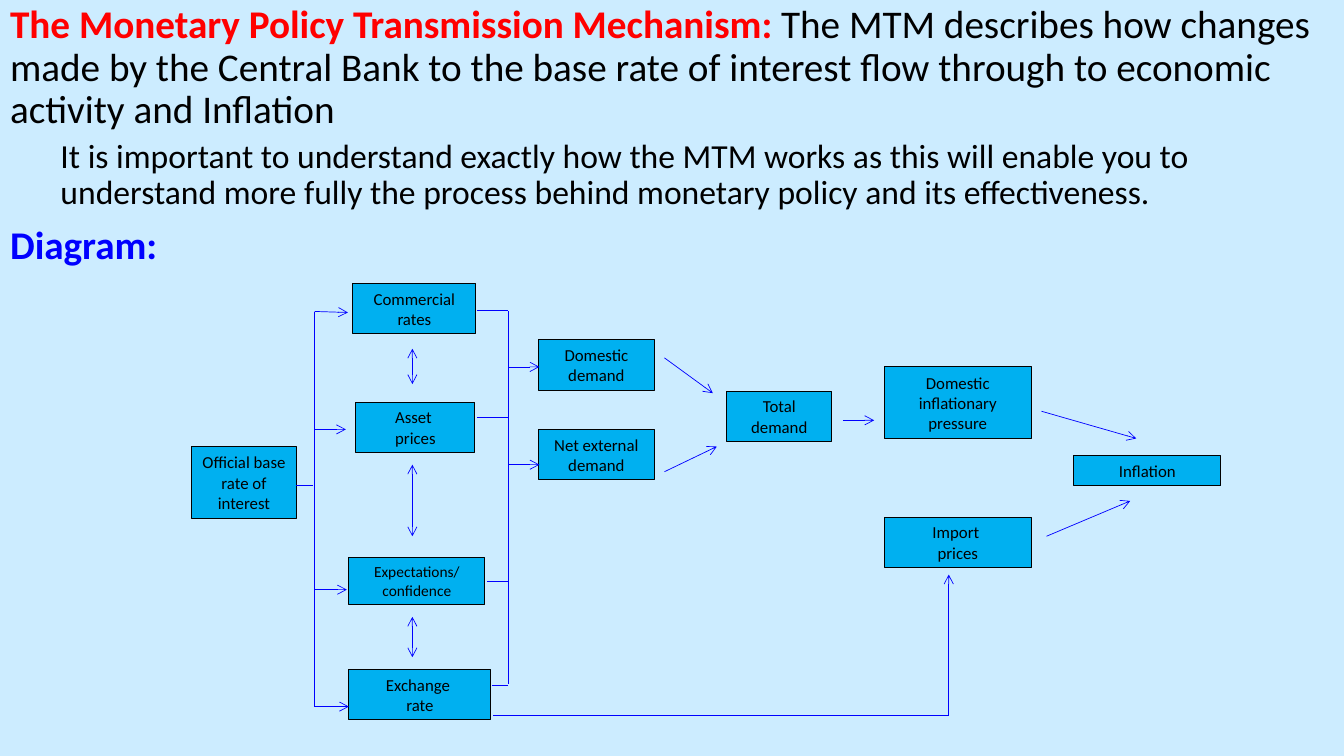
from dataclasses import dataclass

from lxml.etree import SubElement
from pptx import Presentation
from pptx.dml.color import RGBColor
from pptx.enum.shapes import MSO_CONNECTOR, MSO_SHAPE
from pptx.enum.text import MSO_ANCHOR, MSO_AUTO_SIZE, PP_ALIGN
from pptx.oxml.ns import qn
from pptx.shapes.shapetree import GroupShapes
from pptx.slide import Slide
from pptx.text.text import Font
from pptx.util import Inches, Pt

COLOURS = {
    "background": "CCECFF",
    "box": "00B0F0",
    "black": "000000",
    "red": "FF0000",
    "blue": "0000FF",
}
FONT_NAME = "Calibri"
LEFT_SPINE = 3.12
RIGHT_SPINE = 5.04
FEEDBACK_X = 4.09
IMPORT_ARROW_X = 9.41


@dataclass(frozen=True)
class Phrase:
    text: str
    size: int
    colour: str = "black"
    bold: bool = False


@dataclass(frozen=True)
class BodyParagraph:
    phrases: tuple[Phrase, ...]
    level: int = 0


@dataclass(frozen=True)
class Box:
    text: str
    left: float
    top: float
    width: float
    height: float = 0.5
    size: int = 12


@dataclass(frozen=True)
class Line:
    start: tuple[float, float]
    end: tuple[float, float]
    arrowheads: tuple[str, ...] = ()


ARROW = ("tailEnd",)
DOUBLE_ARROW = ("headEnd", "tailEnd")

BODY = (
    BodyParagraph((
        Phrase("The Monetary Policy Transmission Mechanism:", 28, "red", True),
        Phrase(" The MTM describes how changes made by the Central Bank to the base rate "
               "of interest flow through to economic activity and Inflation", 28),
    )),
    BodyParagraph((
        Phrase("It is important to understand exactly how the MTM works as this will enable "
               "you to understand more fully the process behind monetary policy and its "
               "effectiveness.", 24),
    ), level=1),
    BodyParagraph((Phrase("Diagram:", 28, "blue", True),)),
)

BOXES = (
    Box("Official base rate of interest", 1.9, 4.43, 1.04, 0.71),
    Box("Exchange \nrate", 3.46, 6.64, 1.41),
    Box("Expectations/ confidence", 3.46, 5.53, 1.35, 0.47, 11),
    Box("Asset \nprices", 3.53, 3.99, 1.18),
    Box("Commercial rates", 3.5, 2.81, 1.22),
    Box("Net external demand", 5.34, 4.26, 1.15),
    Box("Domestic demand", 5.34, 3.37, 1.15),
    Box("Total demand", 7.21, 3.88, 1.04),
    Box("Domestic inflationary pressure", 8.77, 3.64, 1.46, 0.71),
    Box("Import \nprices", 8.77, 5.13, 1.46),
    Box("Inflation", 10.65, 4.52, 1.46, 0.3),
)

SPINES = (
    Line((LEFT_SPINE, 3.1), (LEFT_SPINE, 7.01)),
    Line((2.94, 4.82), (3.1, 4.82)),
    Line((RIGHT_SPINE, 3.09), (RIGHT_SPINE, 6.79)),
)
FLOWS = (
    Line((6.59, 3.55), (7.07, 3.9), ARROW),
    Line((6.59, 4.68), (7.11, 4.43), ARROW),
    Line((8.36, 4.17), (8.67, 4.17), ARROW),
    Line((10.33, 4.08), (11.27, 4.35), ARROW),
    Line((10.38, 5.32), (11.21, 4.97), ARROW),
    Line((4.89, 7.1), (IMPORT_ARROW_X, 7.1)),
    Line((IMPORT_ARROW_X, 7.1), (IMPORT_ARROW_X, 5.7), ARROW),
)
RATE_ARROWS = tuple(
    Line((LEFT_SPINE, start_y), (end_x, end_y), ARROW)
    for start_y, end_x, end_y in (
        (3.09, 3.45, 3.1), (4.26, 3.43, 4.26), (5.85, 3.44, 5.85), (7.01, 3.46, 7.01)
    )
)
RATE_OUTPUTS = tuple(
    Line((start_x, y), (RIGHT_SPINE, y))
    for start_x, y in ((4.73, 3.08), (4.73, 4.14), (4.83, 5.77), (4.88, 6.8))
)
DEMAND_ARROWS = tuple(
    Line((RIGHT_SPINE, y), (5.35, y), ARROW) for y in (3.64, 4.61)
)
FEEDBACK_ARROWS = tuple(
    Line((FEEDBACK_X, top), (FEEDBACK_X, bottom), DOUBLE_ARROW)
    for top, bottom in ((3.46, 3.81), (4.61, 5.32), (6.12, 6.52))
)
LINES = SPINES + FLOWS + RATE_ARROWS + RATE_OUTPUTS + DEMAND_ARROWS + FEEDBACK_ARROWS


def colour(name: str) -> RGBColor:
    return RGBColor.from_string(COLOURS[name])


def format_font(font: Font, size: int, colour_name: str, bold: bool = False) -> None:
    font.name = FONT_NAME
    font.size = Pt(size)
    font.bold = bold
    font.color.rgb = colour(colour_name)


def fill_body(slide: Slide, width: int, height: int) -> None:
    body = slide.placeholders[1]
    body.left, body.top, body.width, body.height = 0, 0, width, height
    text_frame = body.text_frame
    text_frame.auto_size = MSO_AUTO_SIZE.NONE
    text_frame.vertical_anchor = MSO_ANCHOR.TOP
    for index, content in enumerate(BODY):
        paragraph = text_frame.add_paragraph() if index else text_frame.paragraphs[0]
        paragraph.level = content.level
        paragraph.line_spacing = 0.9
        paragraph.space_before = Pt(5 if content.level else 10)
        properties = paragraph._p.get_or_add_pPr()
        properties.set("marL", str(Inches(0.5 * content.level)))
        properties.set("indent", "0")
        SubElement(properties, qn("a:buNone"))
        for phrase in content.phrases:
            run = paragraph.add_run()
            run.text = phrase.text
            format_font(run.font, phrase.size, phrase.colour, phrase.bold)


def draw_box(shapes: GroupShapes, box: Box) -> None:
    shape = shapes.add_shape(
        MSO_SHAPE.RECTANGLE,
        Inches(box.left), Inches(box.top), Inches(box.width), Inches(box.height),
    )
    shape.shadow.inherit = False
    shape.fill.solid()
    shape.fill.fore_color.rgb = colour("box")
    shape.line.color.rgb = colour("black")
    shape.line.width = Pt(0.75)
    text_frame = shape.text_frame
    text_frame.text = box.text
    text_frame.word_wrap = True
    text_frame.auto_size = MSO_AUTO_SIZE.SHAPE_TO_FIT_TEXT
    text_frame.vertical_anchor = MSO_ANCHOR.MIDDLE
    for paragraph in text_frame.paragraphs:
        paragraph.alignment = PP_ALIGN.CENTER
        for run in paragraph.runs:
            format_font(run.font, box.size, "black")


def draw_line(shapes: GroupShapes, line: Line) -> None:
    connector = shapes.add_connector(
        MSO_CONNECTOR.STRAIGHT, *map(Inches, line.start + line.end)
    )
    connector.line.color.rgb = colour("blue")
    connector.line.width = Pt(0.5)
    outline = connector.line._get_or_add_ln()
    for arrowhead in line.arrowheads:
        SubElement(outline, qn(f"a:{arrowhead}"), type="arrow")
    SubElement(connector._element.spPr, qn("a:effectLst"))


def main() -> None:
    presentation = Presentation()
    presentation.slide_width = Inches(13.33)
    presentation.slide_height = Inches(7.5)
    slide = presentation.slides.add_slide(presentation.slide_layouts[1])
    slide.background.fill.solid()
    slide.background.fill.fore_color.rgb = colour("background")
    title = slide.shapes.title._element
    title.getparent().remove(title)
    fill_body(slide, presentation.slide_width, presentation.slide_height)
    diagram = slide.shapes.add_group_shape()
    for box in BOXES:
        draw_box(diagram.shapes, box)
    for line in LINES:
        draw_line(diagram.shapes, line)
    presentation.save("out.pptx")


if __name__ == "__main__":
    main()
